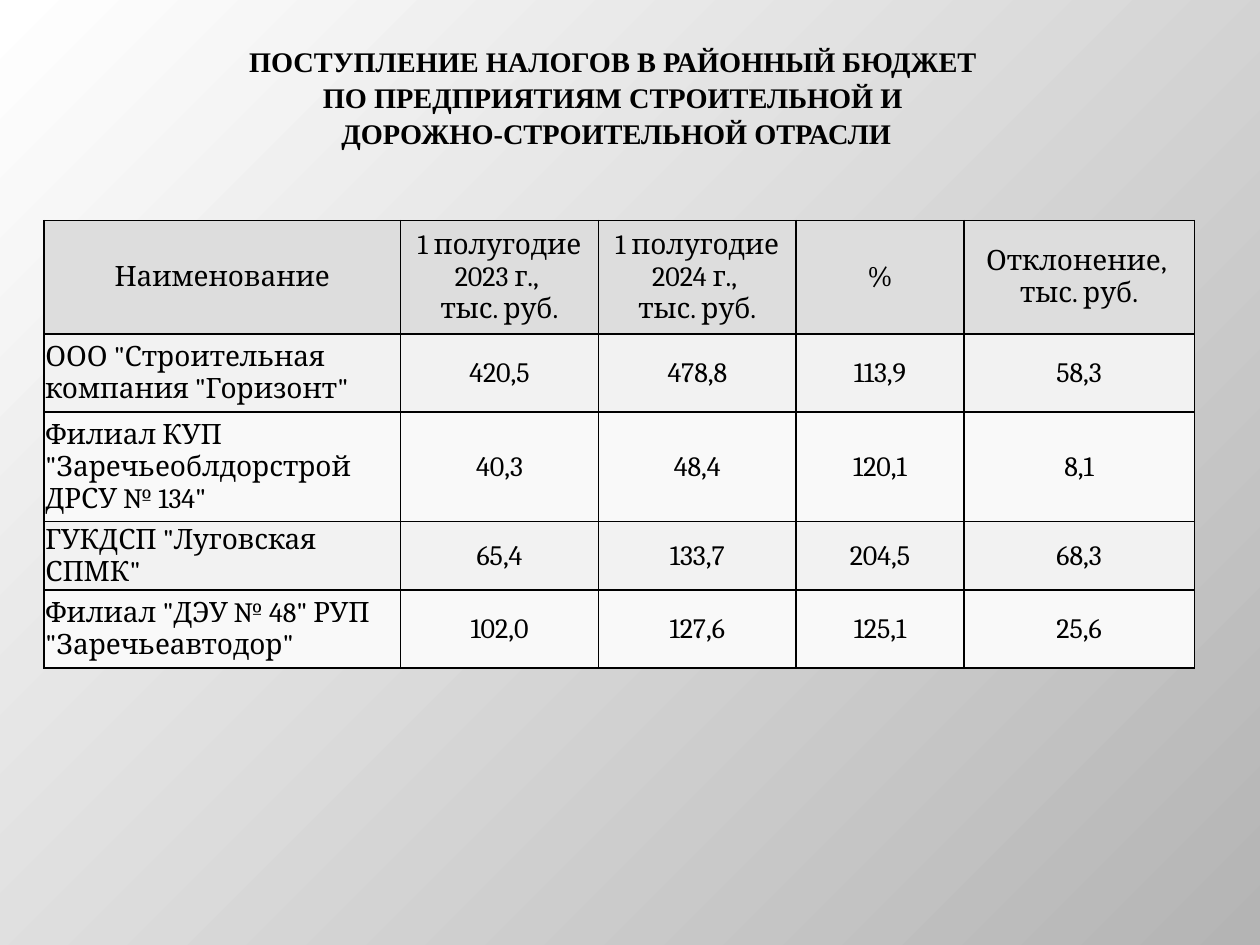
from dataclasses import dataclass

from lxml import etree
from pptx import Presentation, util as u
from pptx.dml.color import RGBColor
from pptx.enum import text
from pptx.oxml import ns

BLACK = "000000"
HEADER_FILL = "DDDDDD"
BAND_FILLS = ("F2F2F2", "F9F9F9")
COLUMN_WIDTHS = (2.83, 1.57, 1.57, 1.33, 1.83)
ROW_HEIGHTS = (0.87, 0.62, 0.87, 0.52, 0.62)

TITLE_LINES = (
    "ПОСТУПЛЕНИЕ НАЛОГОВ В РАЙОННЫЙ БЮДЖЕТ ",
    "ПО ПРЕДПРИЯТИЯМ СТРОИТЕЛЬНОЙ И ",
    "ДОРОЖНО-СТРОИТЕЛЬНОЙ ОТРАСЛИ",
)
HEADERS = (
    ("Наименование",),
    ("1 полугодие 2023 г., ", "тыс. руб."),
    ("1 полугодие 2024 г., ", "тыс. руб."),
    ("%",),
    ("Отклонение, ", "тыс. руб."),
)


@dataclass(frozen=True)
class Enterprise:
    name: str
    first_half_2023: str
    first_half_2024: str
    percent: str
    deviation: str

    def values(self) -> tuple[str, ...]:
        return (self.first_half_2023, self.first_half_2024,
                self.percent, self.deviation)


ENTERPRISES = (
    Enterprise('ООО "Строительная компания "Горизонт"', "420,5", "478,8", "113,9", "58,3"),
    Enterprise('Филиал КУП "Заречьеоблдорстрой ДРСУ № 134"', "40,3", "48,4", "120,1", "8,1"),
    Enterprise('ГУКДСП "Луговская СПМК"', "65,4", "133,7", "204,5", "68,3"),
    Enterprise('Филиал "ДЭУ № 48" РУП "Заречьеавтодор"', "102,0", "127,6", "125,1", "25,6"),
)


def color(value: str) -> RGBColor:
    return RGBColor.from_string(value)


def add_run(paragraph, content: str, font: str, size: float, bold: bool = False) -> None:
    run = paragraph.add_run()
    run.text = content
    run.font.name = font
    run.font.size = u.Pt(size)
    run.font.bold = bold
    run.font.color.rgb = color(BLACK)


def set_background(slide) -> None:
    fill = slide.background.fill
    fill.gradient()
    fill.gradient_angle = 315
    for stop, position, shade in zip(fill.gradient_stops, (0, 1), ("FFFFFF", "B4B4B4")):
        stop.position = position
        stop.color.rgb = color(shade)


def add_title(slide) -> None:
    box = slide.shapes.add_textbox(
        u.Inches(0.28), u.Inches(0.3), u.Inches(9.22), u.Inches(0.93))
    frame = box.text_frame
    frame.word_wrap = True
    frame.vertical_anchor = text.MSO_ANCHOR.MIDDLE
    paragraph = frame.paragraphs[0]
    paragraph.alignment = text.PP_ALIGN.CENTER
    paragraph.line_spacing = 1.05
    for index, line in enumerate(TITLE_LINES):
        if index:
            paragraph.add_line_break()
        add_run(paragraph, line, "Times New Roman", 16.2, bold=True)


def add_borders(cell) -> None:
    properties = cell._tc.get_or_add_tcPr()
    for index, side in enumerate(("lnL", "lnR", "lnT", "lnB")):
        line = etree.Element(ns.qn(f"a:{side}"), w=str(u.Pt(1)))
        fill = etree.SubElement(line, ns.qn("a:solidFill"))
        etree.SubElement(fill, ns.qn("a:srgbClr"), val=BLACK)
        properties.insert(index, line)


def fill_cell(cell, lines: tuple[str, ...], shade: str, centered: bool = True) -> None:
    cell.fill.solid()
    cell.fill.fore_color.rgb = color(shade)
    cell.vertical_anchor = text.MSO_ANCHOR.MIDDLE
    frame = cell.text_frame
    for index, line in enumerate(lines):
        paragraph = frame.add_paragraph() if index else frame.paragraphs[0]
        paragraph.alignment = text.PP_ALIGN.CENTER if centered else text.PP_ALIGN.LEFT
        add_run(paragraph, line, "Cambria", 16)
    add_borders(cell)


def add_tax_table(slide) -> None:
    table = slide.shapes.add_table(
        len(ROW_HEIGHTS), len(COLUMN_WIDTHS), u.Inches(0.35), u.Inches(1.75),
        u.Inches(sum(COLUMN_WIDTHS)), u.Inches(sum(ROW_HEIGHTS))).table
    for column, width in zip(table.columns, COLUMN_WIDTHS):
        column.width = u.Inches(width)
    for row, height in zip(table.rows, ROW_HEIGHTS):
        row.height = u.Inches(height)

    # Header row
    for column, lines in enumerate(HEADERS):
        fill_cell(table.cell(0, column), lines, HEADER_FILL)

    # Enterprise rows in alternating shades
    for index, enterprise in enumerate(ENTERPRISES):
        shade = BAND_FILLS[index % 2]
        for column, content in enumerate((enterprise.name, *enterprise.values())):
            cell = table.cell(index + 1, column)
            cell.margin_left = cell.margin_right = cell.margin_top = u.Inches(0.01)
            cell.margin_bottom = 0
            fill_cell(cell, (content,), shade, centered=column > 0)


def main() -> None:
    presentation = Presentation()
    presentation.slide_width = u.Inches(10)
    presentation.slide_height = u.Inches(7.5)
    slide = presentation.slides.add_slide(presentation.slide_layouts[6])
    set_background(slide)
    add_title(slide)
    add_tax_table(slide)
    presentation.save("out.pptx")


if __name__ == "__main__":
    main()
